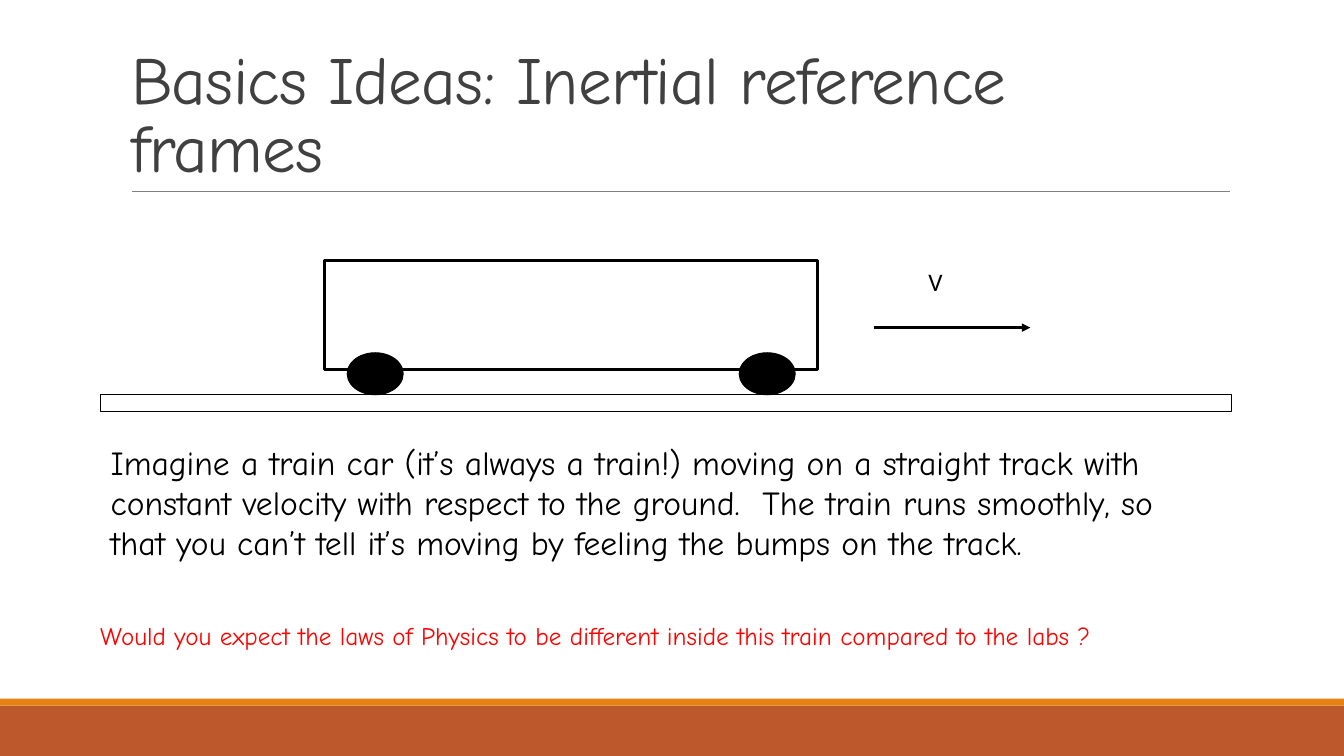
from dataclasses import dataclass

from pptx import Presentation
from pptx.dml.color import RGBColor
from pptx.enum.shapes import MSO_CONNECTOR, MSO_SHAPE as Shape
from pptx.enum.text import MSO_ANCHOR as Anchor, MSO_AUTO_SIZE as AutoSize, PP_ALIGN as Align
from pptx.oxml.ns import qn
from pptx.util import Pt
from lxml import etree


@dataclass(frozen=True)
class Theme:
    ink: str = "000000"
    heading: str = "404040"
    rule: str = "808080"
    question: str = "FF0000"
    band: str = "BD582C"
    stripe: str = "E48312"
    hand_font: str = "Comic Neue"
    plain_font: str = "Calibri"
    title_size: float = 48
    body_size: float = 24
    small_size: float = 18
    hairline: float = 0.5
    thin: float = 0.75
    thick: float = 2


class SlideBuilder:
    def __init__(self, slide, theme):
        self.slide = slide
        self.theme = theme

    def shape(self, kind, box, fill=None, line=None, weight=None):
        shape = self.slide.shapes.add_shape(kind, *map(Pt, box))
        shape.shadow.inherit = False
        if fill:
            shape.fill.solid()
            shape.fill.fore_color.rgb = RGBColor.from_string(fill)
        else:
            shape.fill.background()
        if line:
            shape.line.color.rgb = RGBColor.from_string(line)
            shape.line.width = Pt(weight)
        else:
            shape.line.fill.background()

    def line(self, start, end, color, weight, arrow=False):
        line = self.slide.shapes.add_connector(
            MSO_CONNECTOR.STRAIGHT, *map(Pt, (*start, *end)))
        line.line.color.rgb = RGBColor.from_string(color)
        line.line.width = Pt(weight)
        properties = line._element.spPr
        if arrow:
            etree.SubElement(properties.find(qn("a:ln")), qn("a:tailEnd"), type="triangle")
        etree.SubElement(properties, qn("a:effectLst"))

    def set_words(self, frame, words, size, color, font=None, **frame_format):
        settings = {"word_wrap": True, "auto_size": AutoSize.NONE, **frame_format}
        for name, value in settings.items():
            setattr(frame, name, value)
        paragraph = frame.paragraphs[0]
        paragraph.alignment = Align.LEFT
        run = paragraph.add_run()
        run.text = words
        font_format = {"size": Pt(size), "name": font or self.theme.hand_font}
        for name, value in font_format.items():
            setattr(run.font, name, value)
        run.font.color.rgb = RGBColor.from_string(color)
        return paragraph

    def title(self, words, box):
        title = self.slide.shapes.title
        for name, value in zip(("left", "top", "width", "height"), box):
            setattr(title, name, Pt(value))
        paragraph = self.set_words(title.text_frame, words, self.theme.title_size,
                                   self.theme.heading, vertical_anchor=Anchor.BOTTOM)
        paragraph.line_spacing = 0.85
        paragraph.runs[0]._r.get_or_add_rPr().set("spc", "-50")

    def text(self, words, box, size, color, **options):
        frame = self.slide.shapes.add_textbox(*map(Pt, box)).text_frame
        self.set_words(frame, words, size, color,
                       auto_size=AutoSize.SHAPE_TO_FIT_TEXT, **options)


def main():
    theme = Theme()
    deck = Presentation()
    deck.slide_width, deck.slide_height = Pt(960), Pt(540)
    title_only = deck.slide_layouts[5]
    builder = SlideBuilder(deck.slides.add_slide(title_only), theme)

    # Footer bands and title
    builder.shape(Shape.RECTANGLE, (0, 504, 960, 36), fill=theme.band)
    builder.shape(Shape.RECTANGLE, (0, 499, 960, 5), fill=theme.stripe)
    builder.line((94.3, 136.6), (878.8, 136.6), theme.rule, theme.hairline)
    builder.title("Basics Ideas: Inertial reference frames", (86.4, 22.5, 792, 114.2))

    # Explanation
    builder.text(
        "Imagine a train car (it’s always a train!) moving on a straight track with "
        "constant velocity with respect to the ground.  The train runs smoothly, so "
        "that you can’t tell it’s moving by feeling the bumps on the track.",
        (72, 312, 792, 124), theme.body_size, theme.ink)

    # Track and train car
    builder.shape(Shape.RECTANGLE, (72, 282, 808, 12), line=theme.ink, weight=theme.thin)
    for wheel_left in (248, 528):
        builder.shape(Shape.OVAL, (wheel_left, 252, 40, 30),
                      fill=theme.ink, line=theme.ink, weight=theme.thin)
    builder.shape(Shape.RECTANGLE, (232, 186, 352, 78), line=theme.ink, weight=theme.thick)

    # Velocity
    builder.line((624, 234), (736, 234), theme.ink, theme.thick, arrow=True)
    builder.text("V", (656, 186.5, 25, 29), theme.small_size, theme.ink,
                 font=theme.plain_font, word_wrap=False)

    # Question
    builder.text(
        "Would you expect the laws of Physics to be different inside this train "
        "compared to the labs ?",
        (64.5, 439.2, 848, 29), theme.small_size, theme.question)

    deck.save("out.pptx")


if __name__ == "__main__":
    main()
